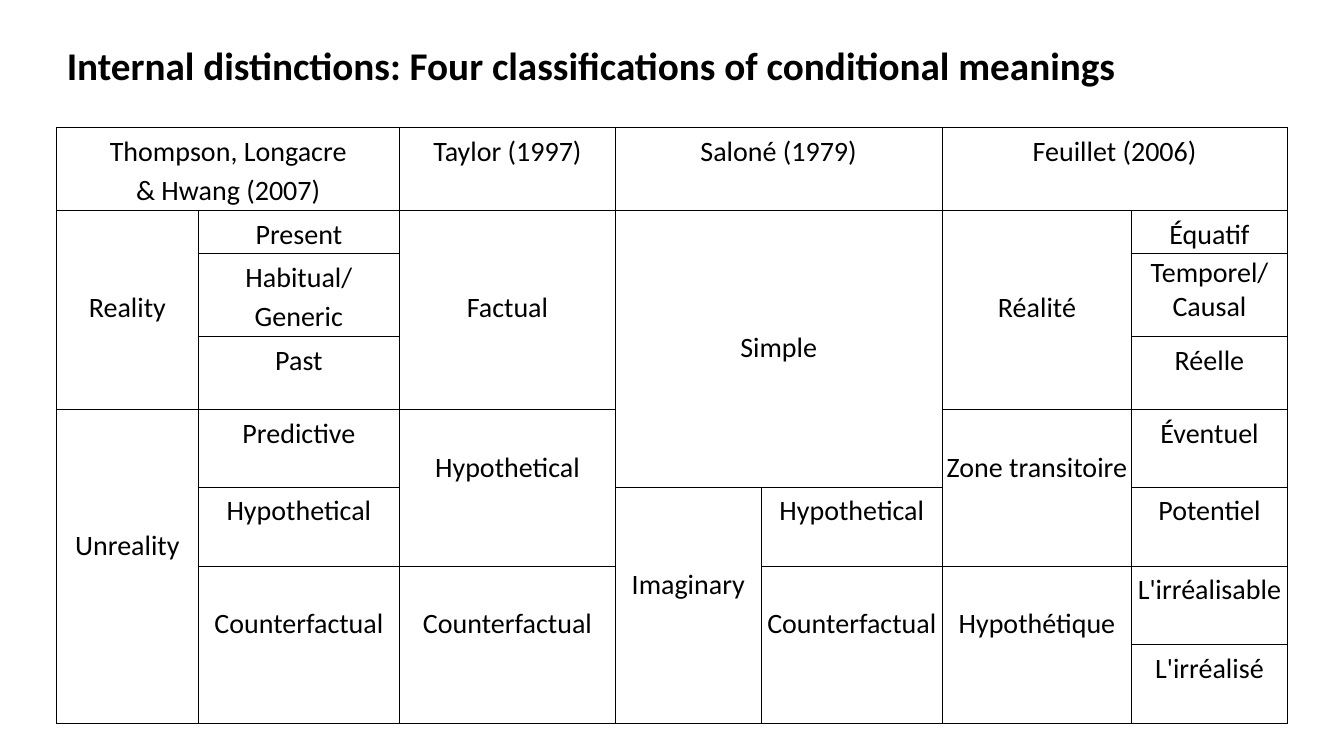
from lxml.etree import SubElement as Sub
from pptx import Presentation
from pptx.dml.color import RGBColor as RGB
from pptx.enum.text import MSO_ANCHOR as Anchor, MSO_AUTO_SIZE as Fit, PP_ALIGN as Align
from pptx.oxml.ns import qn
from pptx.util import Pt

COLS = [101, 144, 154, 104.5, 129, 135.5, 111]
ROWS = [56, 29.5, 56, 52, 55.5, 56.4, 56.4, 56.4]

# row, column, row span, column span, lines of space above, text
CELLS = [
    (0, 0, 1, 2, 0, "Thompson, Longacre\n& Hwang (2007)"),
    (0, 2, 1, 1, 0, "Taylor (1997)"),
    (0, 3, 1, 2, 0, "Saloné (1979)"),
    (0, 5, 1, 2, 0, "Feuillet (2006)"),
    (1, 0, 3, 1, 2, "Reality"),
    (4, 0, 4, 1, 3, "Unreality"),
    (1, 1, 1, 1, 0, "Present"),
    (2, 1, 1, 1, 0, "Habitual/ Generic"),
    (3, 1, 1, 1, 0, "Past"),
    (4, 1, 1, 1, 0, "Predictive"),
    (5, 1, 1, 1, 0, "Hypothetical"),
    (6, 1, 2, 1, 1, "Counterfactual"),
    (1, 2, 3, 1, 2, "Factual"),
    (4, 2, 2, 1, 1, "Hypothetical"),
    (6, 2, 2, 1, 1, "Counterfactual"),
    (1, 3, 4, 2, 3, "Simple"),
    (5, 3, 3, 1, 2, "Imaginary"),
    (5, 4, 1, 1, 0, "Hypothetical"),
    (6, 4, 2, 1, 1, "Counterfactual"),
    (1, 5, 3, 1, 2, "Réalité"),
    (4, 5, 2, 1, 1, "Zone transitoire"),
    (6, 5, 2, 1, 1, "Hypothétique"),
    (1, 6, 1, 1, 0, "Équatif"),
    (2, 6, 1, 1, 0, "Temporel/ Causal"),
    (3, 6, 1, 1, 0, "Réelle"),
    (4, 6, 1, 1, 0, "Éventuel"),
    (5, 6, 1, 1, 0, "Potentiel"),
    (6, 6, 1, 1, 0, "L'irréalisable"),
    (7, 6, 1, 1, 0, "L'irréalisé"),
]
TIGHT = {"Temporel/ Causal"}


class Deck:
    """Holds the style and the current slide."""

    font = "Calibri"
    hues = {"text": "000000", "rule": "000001"}
    inset = 1.4
    first, pitch = 24.4, 28.1

    def __init__(self):
        self.prs = Presentation()
        self.prs.slide_width, self.prs.slide_height = Pt(960), Pt(540)
        self.slide = self.prs.slides.add_slide(self.prs.slide_layouts[5])

    def style(self, frame, size, align, lead, bold=False):
        for para in frame.paragraphs:
            para.alignment, para.line_spacing = align, lead
            para.space_before = Pt(0)
            for run in para.runs:
                font = run.font
                font.name, font.size, font.bold = self.font, Pt(size), bold
                font.color.rgb = RGB.from_string(self.hues["text"])

    def title(self, text, left, top, width, height):
        box = self.slide.shapes.title
        box.left, box.top, box.width, box.height = map(Pt, (left, top, width, height))
        frame = box.text_frame
        frame.text = text
        frame.word_wrap, frame.auto_size = True, Fit.NONE
        frame.vertical_anchor = Anchor.TOP
        self.style(frame, 28, Align.LEFT, 0.9, True)

    def rules(self, cell):
        props = cell._tc.get_or_add_tcPr()
        for side in "LRTB":
            line = Sub(props, qn(f"a:ln{side}"), w=str(Pt(0.6)))
            Sub(Sub(line, qn("a:solidFill")), qn("a:srgbClr"), val=self.hues["rule"])
        cell.fill.background()

    def label(self, cell, text, gap):
        cell.text_frame.text = text
        cell.vertical_anchor = Anchor.TOP
        cell.margin_left = cell.margin_right = cell.margin_bottom = Pt(self.inset)
        space = self.first + self.pitch * (gap - 1) if gap else 0
        cell.margin_top = Pt(self.inset + space)
        self.style(cell.text_frame, 20, Align.CENTER, 1.0 if text in TIGHT else 1.15)

    def table(self, left, top, cols, rows, cells):
        size = map(Pt, (left, top, sum(cols), sum(rows)))
        grid = self.slide.shapes.add_table(len(rows), len(cols), *size).table
        grid.first_row = grid.horz_banding = False
        for col, width in zip(grid.columns, cols):
            col.width = Pt(width)
        for row, height in zip(grid.rows, rows):
            row.height = Pt(height)
        for cell in grid.iter_cells():
            self.rules(cell)
        for row, col, down, over, gap, text in cells:
            cell = grid.cell(row, col)
            if down * over > 1:
                cell.merge(grid.cell(row + down - 1, col + over - 1))
            self.label(cell, text, gap)


def main():
    deck = Deck()
    deck.title("Internal distinctions: Four classifications of conditional meanings",
               40.5, 29.5, 878.5, 55.5)
    deck.table(40.5, 91.2, COLS, ROWS, CELLS)
    deck.prs.save("out.pptx")


if __name__ == "__main__":
    main()
